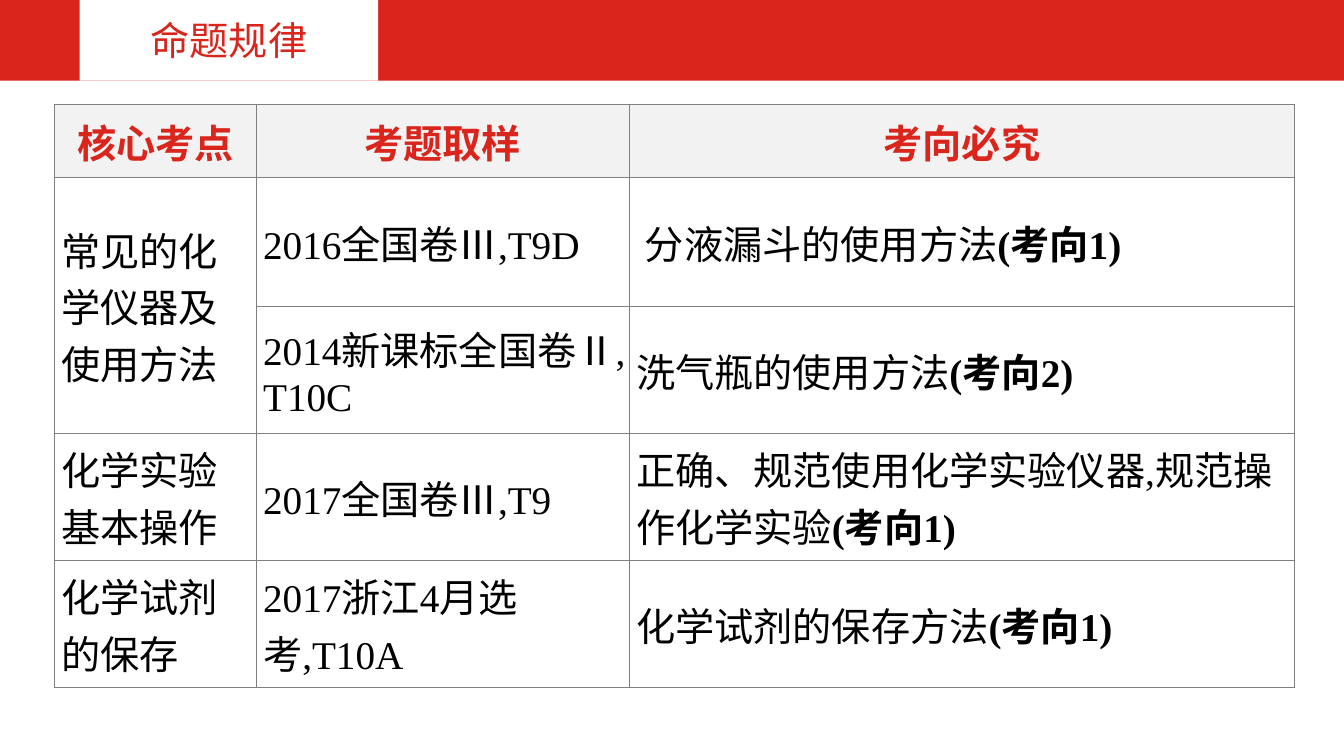
"""Build the slide that lists exam topics, sample questions and directions."""
from dataclasses import dataclass

from lxml import etree
from pptx import Presentation
from pptx.dml.color import RGBColor
from pptx.enum.lang import MSO_LANGUAGE_ID
from pptx.enum.shapes import MSO_SHAPE
from pptx.enum.text import MSO_ANCHOR, PP_ALIGN
from pptx.oxml.ns import qn
from pptx.slide import Slide
from pptx.table import Table, _Cell
from pptx.text.text import TextFrame
from pptx.util import Inches, Pt

RECTANGLE = MSO_SHAPE.RECTANGLE
MIDDLE = MSO_ANCHOR.MIDDLE
CENTER = PP_ALIGN.CENTER
LEFT = PP_ALIGN.LEFT
CHINESE = MSO_LANGUAGE_ID.SIMPLIFIED_CHINESE

RED = RGBColor(0xDA, 0x25, 0x1C)
WHITE = RGBColor(0xFF, 0xFF, 0xFF)
BLACK = RGBColor(0x00, 0x00, 0x00)
LIGHT_GRAY = RGBColor(0xF2, 0xF2, 0xF2)
BORDER_GRAY = RGBColor(0x80, 0x80, 0x80)

FONT_NAME = "Times New Roman"
FONT_SIZE = Pt(28)
BAND_HEIGHT = 0.8
COLUMN_WIDTHS = (2, 3.7, 6.6)
ROW_HEIGHTS = (0.72, 1.28, 1.26, 1.26, 1.26)
HEADERS = ("核心考点", "考题取样", "考向必究")


@dataclass(frozen=True)
class Band:
    left: float
    width: float
    color: RGBColor
    title: str = ""


@dataclass(frozen=True)
class ExamRow:
    topic: str
    sample: str
    method: str
    direction: str


@dataclass(frozen=True)
class CellStyle:
    fill: RGBColor
    color: RGBColor
    alignment: PP_ALIGN
    side_margin: float
    end_margin: float
    bold: bool


BANDS = (
    Band(0, 13.33, RED),
    Band(0.79, 2.96, WHITE, "命题规律"),
)
EXAM_ROWS = (
    ExamRow("常见的化学仪器及使用方法", "2016全国卷Ⅲ,T9D", " 分液漏斗的使用方法", "(考向1)"),
    ExamRow("", "2014新课标全国卷Ⅱ,T10C", "洗气瓶的使用方法", "(考向2)"),
    ExamRow("化学实验基本操作", "2017全国卷Ⅲ,T9", "正确、规范使用化学实验仪器,规范操作化学实验", "(考向1)"),
    ExamRow("化学试剂的保存", "2017浙江4月选考,T10A", "化学试剂的保存方法", "(考向1)"),
)
HEADER_STYLE = CellStyle(LIGHT_GRAY, RED, CENTER, 0.16, 0.08, True)
BODY_STYLE = CellStyle(WHITE, BLACK, LEFT, 0.07, 0, False)


def format_text(text_frame: TextFrame, color: RGBColor, alignment: PP_ALIGN, bold: bool) -> None:
    paragraph = text_frame.paragraphs[0]
    paragraph.alignment = alignment
    for run in paragraph.runs:
        run.font.name = FONT_NAME
        run.font.size = FONT_SIZE
        run.font.color.rgb = color
        run.font.bold = bold
        run.font.language_id = CHINESE


def draw_band(slide: Slide, band: Band) -> None:
    shape = slide.shapes.add_shape(
        RECTANGLE, Inches(band.left), 0, Inches(band.width), Inches(BAND_HEIGHT)
    )
    shape.shadow.inherit = False
    shape.fill.solid()
    shape.fill.fore_color.rgb = band.color
    shape.line.fill.background()
    if band.title:
        shape.text_frame.text = band.title
        shape.text_frame.vertical_anchor = MIDDLE
        format_text(shape.text_frame, RED, CENTER, False)


def add_borders(cell: _Cell) -> None:
    properties = cell._tc.get_or_add_tcPr()
    for side in ("a:lnL", "a:lnR", "a:lnT", "a:lnB"):
        line = etree.SubElement(properties, qn(side), w=str(Pt(1)))
        fill = etree.SubElement(line, qn("a:solidFill"))
        etree.SubElement(fill, qn("a:srgbClr"), val=str(BORDER_GRAY))


def fill_cell(cell: _Cell, text: str, style: CellStyle, bold_ending: str = "") -> None:
    add_borders(cell)
    cell.fill.solid()
    cell.fill.fore_color.rgb = style.fill
    cell.vertical_anchor = MIDDLE
    cell.margin_left = cell.margin_right = Inches(style.side_margin)
    cell.margin_top = cell.margin_bottom = Inches(style.end_margin)
    cell.text_frame.text = text
    paragraph = cell.text_frame.paragraphs[0]
    ending = paragraph.add_run() if bold_ending else None
    if ending is not None:
        ending.text = bold_ending
    format_text(cell.text_frame, style.color, style.alignment, style.bold)
    if ending is not None:
        ending.font.bold = True


def draw_table(slide: Slide) -> Table:
    table = slide.shapes.add_table(
        len(ROW_HEIGHTS), len(COLUMN_WIDTHS), Inches(0.54), Inches(1.04),
        Inches(sum(COLUMN_WIDTHS)), Inches(sum(ROW_HEIGHTS)),
    ).table
    for column, width in zip(table.columns, COLUMN_WIDTHS):
        column.width = Inches(width)
    for row, height in zip(table.rows, ROW_HEIGHTS):
        row.height = Inches(height)
    for index, header in enumerate(HEADERS):
        fill_cell(table.cell(0, index), header, HEADER_STYLE)
    for index, exam in enumerate(EXAM_ROWS, start=1):
        fill_cell(table.cell(index, 0), exam.topic, BODY_STYLE)
        fill_cell(table.cell(index, 1), exam.sample, BODY_STYLE)
        fill_cell(table.cell(index, 2), exam.method, BODY_STYLE, exam.direction)
    table.cell(1, 0).merge(table.cell(2, 0))
    return table


def main() -> None:
    presentation = Presentation()
    presentation.slide_width = Inches(13.33)
    presentation.slide_height = Inches(7.5)
    slide = presentation.slides.add_slide(presentation.slide_layouts[6])
    for band in BANDS:
        draw_band(slide, band)
    draw_table(slide)
    presentation.save("out.pptx")


if __name__ == "__main__":
    main()
